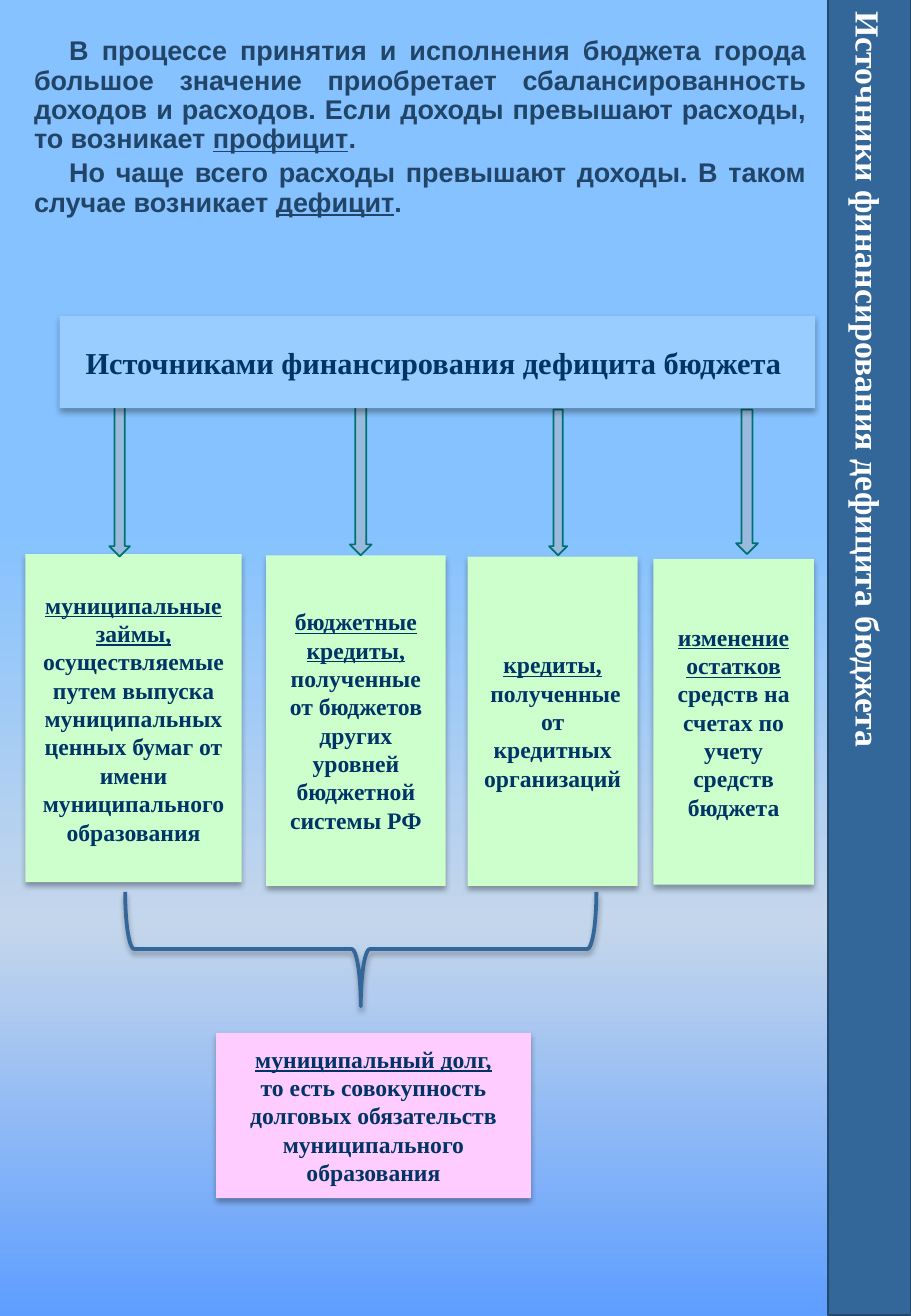
from lxml import etree
from pptx import Presentation
from pptx.dml.color import RGBColor
from pptx.enum.shapes import MSO_SHAPE
from pptx.enum.text import MSO_ANCHOR, MSO_AUTO_SIZE, PP_ALIGN
from pptx.oxml.ns import qn
from pptx.util import Pt

PX = 9144
RECT, ARROW, BRACE = MSO_SHAPE.RECTANGLE, MSO_SHAPE.DOWN_ARROW, MSO_SHAPE.RIGHT_BRACE
LEFT, CENTER, JUSTIFY = PP_ALIGN.LEFT, PP_ALIGN.CENTER, PP_ALIGN.JUSTIFY
TOP, MIDDLE = MSO_ANCHOR.TOP, MSO_ANCHOR.MIDDLE
NO_FIT = MSO_AUTO_SIZE.NONE
SERIF, SANS = "Times New Roman", "Arial"
NAVY, GREEN, PINK, SKY, STEEL = "003366", "CCFFCC", "FFCCFF", "99CCFF", "336699"

BACKGROUND = [(0, "85C2FF"), (40, "85C2FF"), (70, "C4D6EB"), (100, "5E9EFF")]
TITLE = "Источники финансирования дефицита бюджета"
INTRO = [
    [("В процессе принятия и исполнения бюджета города большое значение приобретает "
      "сбалансированность доходов и расходов. Если доходы превышают расходы, "
      "то возникает ", False), ("профицит", True), (".", False)],
    [("Но чаще всего расходы превышают доходы. В таком случае возникает ", False),
     ("дефицит", True), (".", False)],
]
HEADER = [[("Источниками финансирования дефицита бюджета ", False)]]
SOURCES = [
    ((21, 456, 178, 270), [[("муниципальные займы,", True),
     (" осуществляемые путем выпуска муниципальных ценных бумаг от имени "
      "муниципального образования", False)]]),
    ((219, 457, 148, 272), [[("бюджетные кредиты,", True),
     (" полученные от бюджетов других уровней бюджетной системы РФ", False)]]),
    ((385, 458, 140, 271), [[("кредиты,", True)],
                            [(" полученные от кредитных организаций", False)]]),
    ((538, 460, 132, 268), [[("изменение остатков", True),
     (" средств на счетах по учету средств бюджета", False)]]),
]
ARROWS = [(90, 335, 17, 123), (288, 335, 18, 122), (452, 337, 15, 120), (606, 337, 18, 119)]
DEBT = [[("муниципальный долг,", True)],
        [("то есть совокупность долговых обязательств муниципального образования", False)]]


def rgb(value):
    """Turn a hex string into a colour."""
    return RGBColor.from_string(value)


def emu(box):
    """Turn a box in px into EMU lengths."""
    return [v * PX for v in box]


def place(sp, box):
    """Move a placeholder to a box."""
    sp.left, sp.top, sp.width, sp.height = emu(box)


def add_color(parent, value, alpha=None):
    """Append a colour element, with optional opacity in percent."""
    clr = etree.SubElement(parent, qn("a:srgbClr"), val=value)
    if alpha is not None:
        etree.SubElement(clr, qn("a:alpha"), val=str(alpha * 1000))


def add_shadow(sp):
    """Give a shape a soft shadow below it."""
    effects = sp._element.spPr.find(qn("a:effectLst"))
    shadow = etree.SubElement(effects, qn("a:outerShdw"), blurRad=str(Pt(3.5)),
                              dist=str(Pt(2.2)), dir="5400000", rotWithShape="0")
    add_color(shadow, "000000", 32)


def write(tf, paragraphs, size, font, color, align, anchor=MIDDLE):
    """Fill a text frame with paragraphs of (text, underlined) runs."""
    tf.word_wrap = True
    tf.auto_size = NO_FIT
    tf.vertical_anchor = anchor
    for i, runs in enumerate(paragraphs):
        p = tf.add_paragraph() if i else tf.paragraphs[0]
        p.alignment = align
        p.space_before = Pt(0)
        for text, underlined in runs:
            r = p.add_run()
            r.text = text
            r.font.size, r.font.name = Pt(size), font
            r.font.bold, r.font.underline = True, underlined
            r.font.color.rgb = rgb(color)


def add_figure(s, kind, box, fill=None, line=None, width=1):
    """Add a preset shape with its fill and line."""
    sp = s.shapes.add_shape(kind, *emu(box))
    sp.shadow.inherit = False
    if fill:
        sp.fill.solid()
        sp.fill.fore_color.rgb = rgb(fill)
    else:
        sp.fill.background()
    if line:
        sp.line.color.rgb = rgb(line)
        sp.line.width = Pt(width)
    else:
        sp.line.fill.background()
    return sp


def add_card(s, box, paragraphs, fill, size=14):
    """Add a shadowed box with centred text."""
    sp = add_figure(s, RECT, box, fill)
    add_shadow(sp)
    write(sp.text_frame, paragraphs, size, SERIF, NAVY, CENTER)


def paint_background(s):
    """Fill the slide with a vertical gradient."""
    fill = s.background.fill
    fill.gradient()
    fill.gradient_angle = 270
    stops = next(s.element.iter(qn("a:gsLst")))
    for stop in list(stops):
        stops.remove(stop)
    for pos, value in BACKGROUND:
        add_color(etree.SubElement(stops, qn("a:gs"), pos=str(pos * 1000)), value)


def add_title_band(s, box):
    """Turn the title into a rotated band that covers the box."""
    x, y, w, h = box
    sp = s.shapes.title
    place(sp, (x + (w - h) // 2, y + (h - w) // 2, h, w))
    sp.rotation = 90
    sp.fill.solid()
    sp.fill.fore_color.rgb = rgb(STEEL)
    sp.line.color.rgb = rgb("24496E")
    sp.line.width = Pt(1)
    write(sp.text_frame, [[(TITLE, False)]], 20, SERIF, "FFFFFF", LEFT)


def add_intro(s, box):
    """Put the introduction in the subtitle placeholder."""
    sp = s.placeholders[1]
    place(sp, box)
    tf = sp.text_frame
    write(tf, INTRO, 16, SANS, "224567", JUSTIFY, TOP)
    for p in tf.paragraphs:
        p.line_spacing = 0.9
        pPr = p._p.get_or_add_pPr()
        pPr.set("marL", "0")
        pPr.set("indent", str(29 * PX))
    tf.paragraphs[1].space_before = Pt(3.2)


def add_scheme(s, box):
    """Draw the sources of financing, their arrows and the resulting debt."""
    left, top = box[:2]

    def within(part):
        """Shift a part by the corner of the scheme."""
        return (left + part[0], top + part[1], *part[2:])

    for part, paragraphs in SOURCES:
        add_card(s, within(part), paragraphs, GREEN)
    add_card(s, within((178, 850, 259, 136)), DEBT, PINK)
    for part in ARROWS:
        add_figure(s, ARROW, within(part), "9ABADD", "007171")
    add_card(s, within((49, 260, 622, 76)), HEADER, SKY, 18)
    brace = add_figure(s, BRACE, within((250, 587, 94, 388)), None, STEEL, 2.25)
    brace.rotation = 90
    brace.adjustments[0], brace.adjustments[1] = 0.08, 0.5
    add_shadow(brace)


def main():
    """Build the slide and save it."""
    prs = Presentation()
    prs.slide_width, prs.slide_height = emu((750, 1083))
    s = prs.slides.add_slide(prs.slide_layouts[0])
    paint_background(s)
    add_title_band(s, (682, 0, 68, 1083))
    add_intro(s, (18, 26, 656, 196))
    add_scheme(s, (0, 0, 682, 1083))
    prs.save("out.pptx")


if __name__ == "__main__":
    main()
